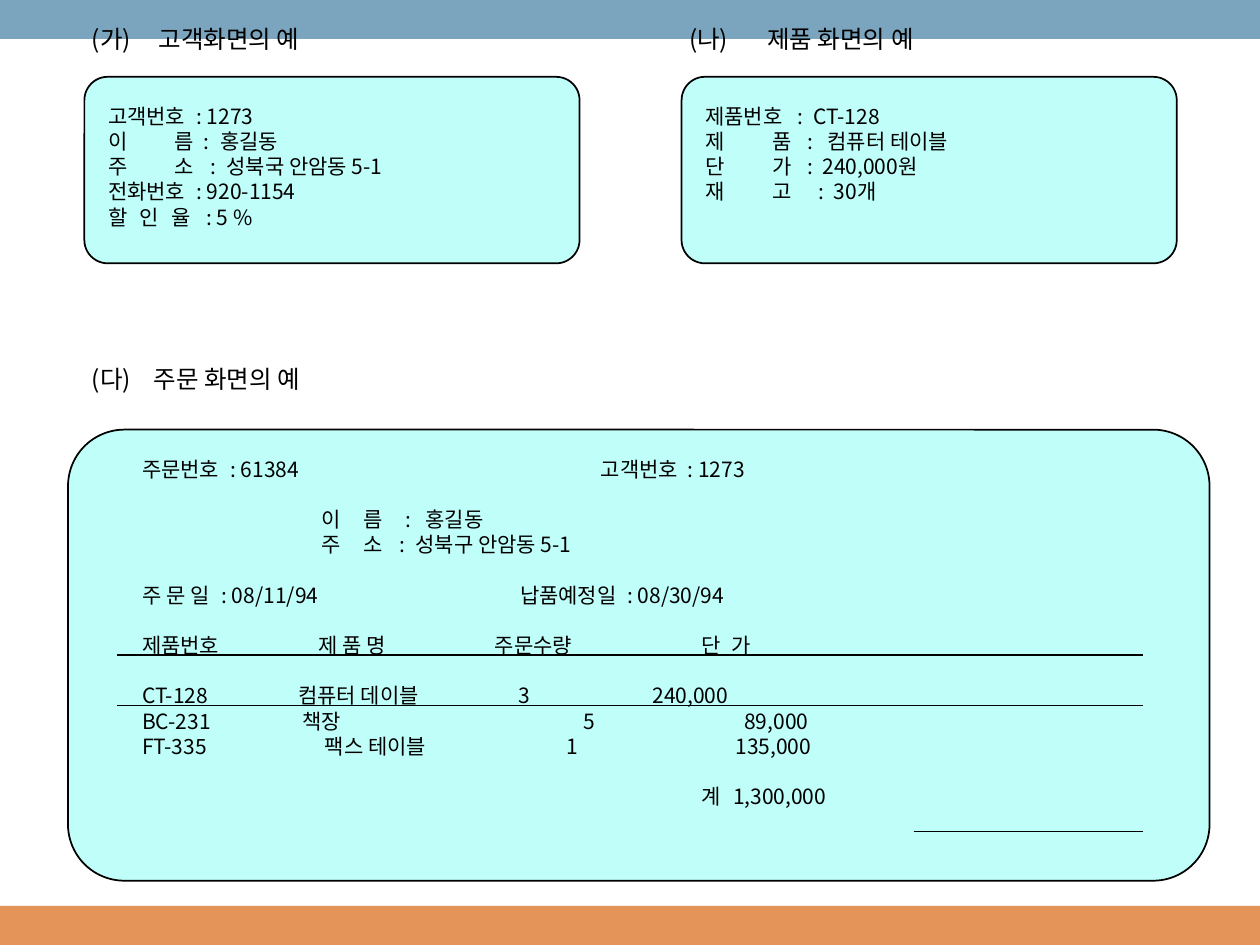
"""Build the slide of sample customer, product and order screens."""
from lxml import etree
from pptx import Presentation
from pptx import util as u
from pptx.dml.color import RGBColor
from pptx.enum import shapes, text
from pptx.oxml.ns import qn

INK = RGBColor(0x00, 0x00, 0x00)
PANEL = RGBColor(0xC0, 0xFE, 0xF9)
HEADER = RGBColor(0x7B, 0xA5, 0xBE)
FOOTER = RGBColor(0xE4, 0x94, 0x58)
FONT = "Noto Sans CJK KR"
COLUMNS, ROWS = 100, 75
CELL = u.Inches(0.1)
LEADING = 1.2


def grid(*cells):
    return [u.Emu(round(cell * CELL)) for cell in cells]


def write(paragraph, content, size=12, stops=(), skip=0):
    paragraph.line_spacing = u.Pt(size * LEADING)
    paragraph.space_before = u.Pt(size * LEADING * skip)
    run = paragraph.add_run()
    run.text = content
    run.font.size = u.Pt(size)
    run.font.name = FONT
    run.font.color.rgb = INK
    etree.SubElement(run.font._element, qn("a:ea"), typeface=FONT)
    if stops:
        tabs = etree.SubElement(paragraph._p.get_or_add_pPr(), qn("a:tabLst"))
        for stop in grid(*stops):
            etree.SubElement(tabs, qn("a:tab"), pos=str(stop), algn="l")


class Screen:
    """Draws styled elements on one slide, measured in grid cells."""

    def __init__(self, slide):
        self.shapes = slide.shapes

    def block(self, kind, place, color):
        block = self.shapes.add_shape(kind, *grid(*place))
        block.shadow.inherit = False
        block.fill.solid()
        block.fill.fore_color.rgb = color
        return block

    def bar(self, top, color):
        bar = self.block(shapes.MSO_SHAPE.RECTANGLE, (0, top, COLUMNS, 3.1), color)
        bar.line.fill.background()

    def panel(self, *place):
        panel = self.block(shapes.MSO_SHAPE.ROUNDED_RECTANGLE, place, PANEL)
        panel.adjustments[0] = 0.125
        panel.line.color.rgb = INK
        panel.line.width = u.Pt(1)

    def rule(self, start, end, row):
        rule = self.shapes.add_connector(
            shapes.MSO_CONNECTOR.STRAIGHT, *grid(start, row, end, row))
        rule.line.color.rgb = INK
        rule.line.width = u.Pt(1)
        etree.SubElement(rule._element.spPr, qn("a:effectLst"))

    def lines(self, place, entries, size=12):
        frame = self.shapes.add_textbox(*grid(*place)).text_frame
        frame.word_wrap = True
        frame.vertical_anchor = text.MSO_ANCHOR.TOP
        for index, (content, stops, skip) in enumerate(entries):
            paragraph = frame.add_paragraph() if index else frame.paragraphs[0]
            write(paragraph, content, size=size, stops=stops, skip=skip)

    def title(self, left, top, content, stop):
        self.lines((left, top, 36.9, 4), [(content, (stop,), 0)], size=14)


CUSTOMER = [
    ("고객번호\t: 1273", (7,), 0),
    ("이\t름\t:\t홍길동", (5.3, 7.6, 8.9), 0),
    ("주\t소\t:\t성북국 안암동 5-1", (5.3, 8.1, 9.4), 0),
    ("전화번호\t: 920-1154", (7,), 0),
    ("할\t인\t율\t: 5 %", (2.5, 5, 7.8), 0),
]
PRODUCT = [
    ("제품번호\t:\tCT-128", (7.3, 8.6), 0),
    ("제\t품\t:\t컴퓨터 테이블", (5.3, 8.1, 9.7), 0),
    ("단\t가\t:\t240,000원", (5.3, 8.1, 9.3), 0),
    ("재\t고\t:\t30개", (5.3, 9, 10.2), 0),
]
ORDER = [
    ("주문번호\t: 61384\t고객번호\t: 1273", (7, 36.4, 43.3), 0),
    ("\t이\t름\t:\t홍길동", (14.2, 17.6, 20.9, 22.5), 1),
    ("\t주\t소\t:\t성북구 안암동 5-1", (14.2, 17.6, 20.4, 21.7), 0),
    ("주 문 일\t: 08/11/94\t납품예정일\t: 08/30/94", (6.3, 30, 38.5), 1),
    ("제품번호\t제 품 명\t주문수량\t단\t가", (14, 28, 44.4, 46.8), 1),
    ("CT-128\t컴퓨터 데이블\t3\t240,000", (12.4, 29.9, 40.5), 1),
    ("BC-231\t책장\t5\t89,000", (12.7, 35, 47.8), 0),
    ("FT-335\t팩스 테이블\t1\t135,000", (14.5, 33.7, 47.1), 0),
    ("\t계\t1,300,000", (44.4, 46.9), 1),
]


def main():
    deck = Presentation()
    deck.slide_width, deck.slide_height = grid(COLUMNS, ROWS)
    screen = Screen(deck.slides.add_slide(deck.slide_layouts[6]))

    screen.bar(71.9, FOOTER)
    screen.bar(0, HEADER)
    for left, entries in ((6.7, CUSTOMER), (54.1, PRODUCT)):
        screen.panel(left, 6.1, 39.3, 14.8)
        screen.lines((left + 0.9, 7.7, 36.7, 13.1), entries)
    screen.panel(5.4, 34.1, 90.6, 35.8)
    screen.lines((10.3, 35.7, 62.6, 29.2), ORDER)

    screen.title(6.3, 1.4, "(가)\t고객화면의 예", 5.3)
    screen.title(53.7, 1.4, "(나)\t제품 화면의 예", 6.2)
    screen.title(6.3, 28.4, "(다)\t주문 화면의 예", 4.9)

    for start, row in ((9.3, 52), (9.3, 56), (72.5, 66)):
        screen.rule(start, 90.7, row)
    deck.save("out.pptx")


if __name__ == "__main__":
    main()
